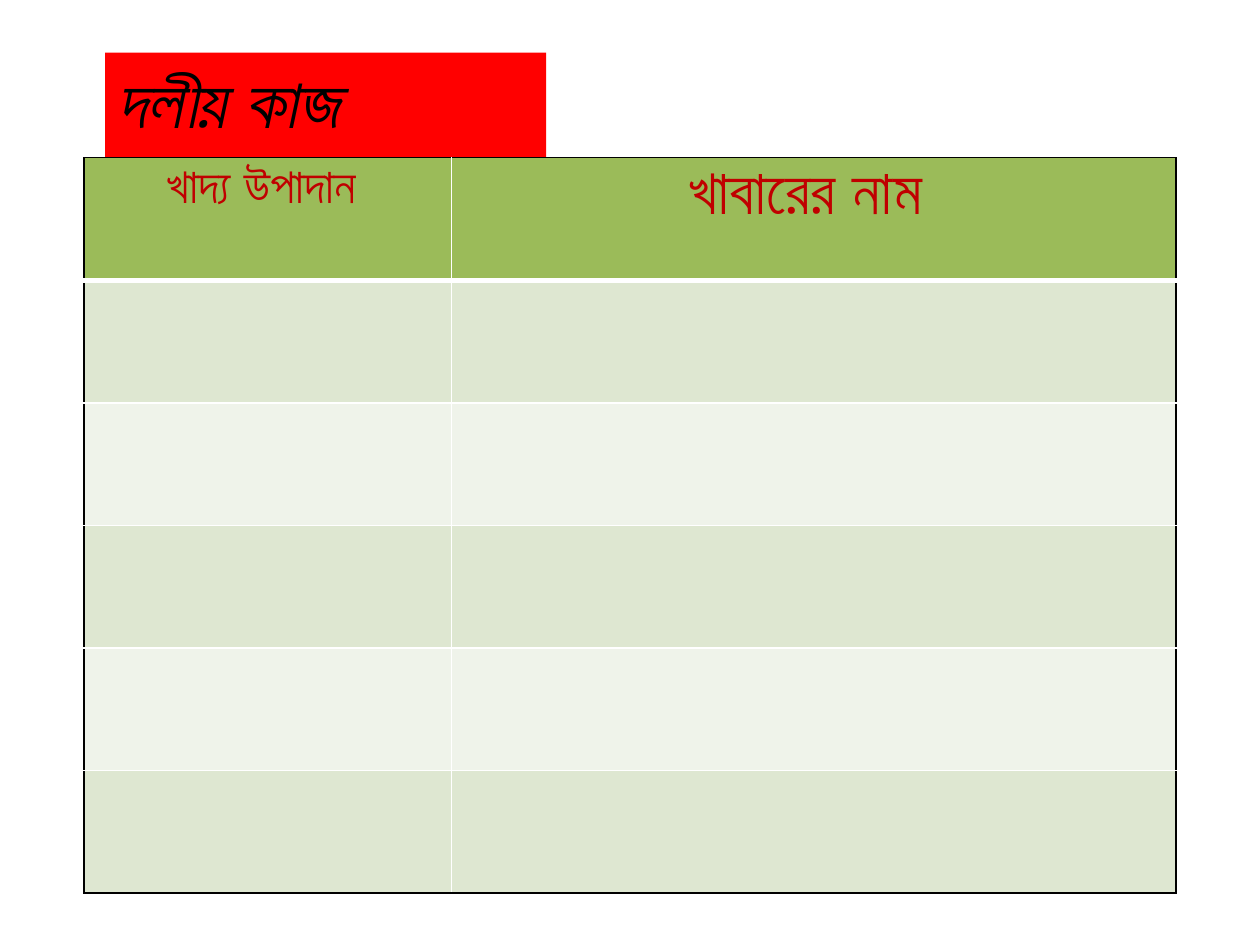
import pptx
import pptx.util
import pptx.dml.color
import pptx.enum.text
import pptx.oxml.ns
from lxml import etree

Cm, Pt = pptx.util.Cm, pptx.util.Pt
RGB = pptx.dml.color.RGBColor
TEXT = pptx.enum.text

RED = RGB(0xFF, 0x00, 0x00)
BLACK = RGB(0x00, 0x00, 0x00)
WHITE = RGB(0xFF, 0xFF, 0xFF)
MAROON = RGB(0xC0, 0x00, 0x00)
GREEN = RGB(0x9B, 0xBB, 0x59)
BANDS = [RGB(0xDE, 0xE7, 0xD1), RGB(0xEF, 0xF3, 0xEA)]

FONT = "Arial"
TITLE = "দলীয় কাজ"
HEADS = [("খাদ্য উপাদান ", 28), ("খাবারের নাম ", 36)]
WIDTHS = [7.41, 14.61]
ROWS, HIGH = 6, 2.47


def style(run, size, color):
    font = run.font
    font.name, font.size, font.bold = FONT, Pt(size), True
    font.color.rgb = color


def add_line(parent, tag, color, width):
    """Append a solid line element, such as a cell border or text outline."""
    line = etree.SubElement(parent, pptx.oxml.ns.qn(tag), w=str(Pt(width)))
    fill = etree.SubElement(line, pptx.oxml.ns.qn("a:solidFill"))
    etree.SubElement(fill, pptx.oxml.ns.qn("a:srgbClr"), val=str(color))
    return line


def frame(cell, row, col):
    """Black round the table, white inside, thick under the header."""
    last = len(WIDTHS) - 1
    sides = [
        ("a:lnL", col == 0, 1),
        ("a:lnR", col == last, 1),
        ("a:lnT", row == 0, 3 if row == 1 else 1),
        ("a:lnB", row == ROWS - 1, 3 if row == 0 else 1),
    ]
    props = cell._tc.get_or_add_tcPr()
    for tag, outer, width in sides:
        add_line(props, tag, BLACK if outer else WHITE, width)


def add_title(slide):
    title = slide.shapes.title
    title.left, title.top = Cm(2.12), Cm(1.06)
    title.width, title.height = Cm(8.89), Cm(1.96)
    title.fill.solid()
    title.fill.fore_color.rgb = RED
    text = title.text_frame
    text.text = TITLE
    text.word_wrap = True
    text.auto_size = TEXT.MSO_AUTO_SIZE.SHAPE_TO_FIT_TEXT
    text.vertical_anchor = TEXT.MSO_ANCHOR.TOP
    para = text.paragraphs[0]
    para.alignment = TEXT.PP_ALIGN.LEFT
    style(para.runs[0], 40, BLACK)
    para.runs[0].font.italic = True


def add_grid(slide):
    grid = slide.shapes.add_table(
        ROWS, len(WIDTHS), Cm(1.69), Cm(3.18), Cm(sum(WIDTHS)), Cm(ROWS * HIGH)
    ).table
    for col, width in zip(grid.columns, WIDTHS):
        col.width = Cm(width)
    for r, row in enumerate(grid.rows):
        row.height = Cm(HIGH)
        for c, cell in enumerate(row.cells):
            frame(cell, r, c)
            cell.fill.solid()
            cell.fill.fore_color.rgb = BANDS[(r - 1) % 2] if r else GREEN
    for c, (label, size) in enumerate(HEADS):
        cell = grid.cell(0, c)
        cell.text_frame.text = label
        para = cell.text_frame.paragraphs[0]
        para.alignment = TEXT.PP_ALIGN.CENTER
        style(para.runs[0], size, MAROON)
    props = para.runs[0].font._element
    props.insert(0, add_line(props, "a:ln", BLACK, 0.75))


def main():
    deck = pptx.Presentation()
    deck.slide_width, deck.slide_height = Cm(25.4), Cm(19.05)
    slide = deck.slides.add_slide(deck.slide_layouts[5])
    add_grid(slide)
    add_title(slide)
    deck.save("out.pptx")


if __name__ == "__main__":
    main()
